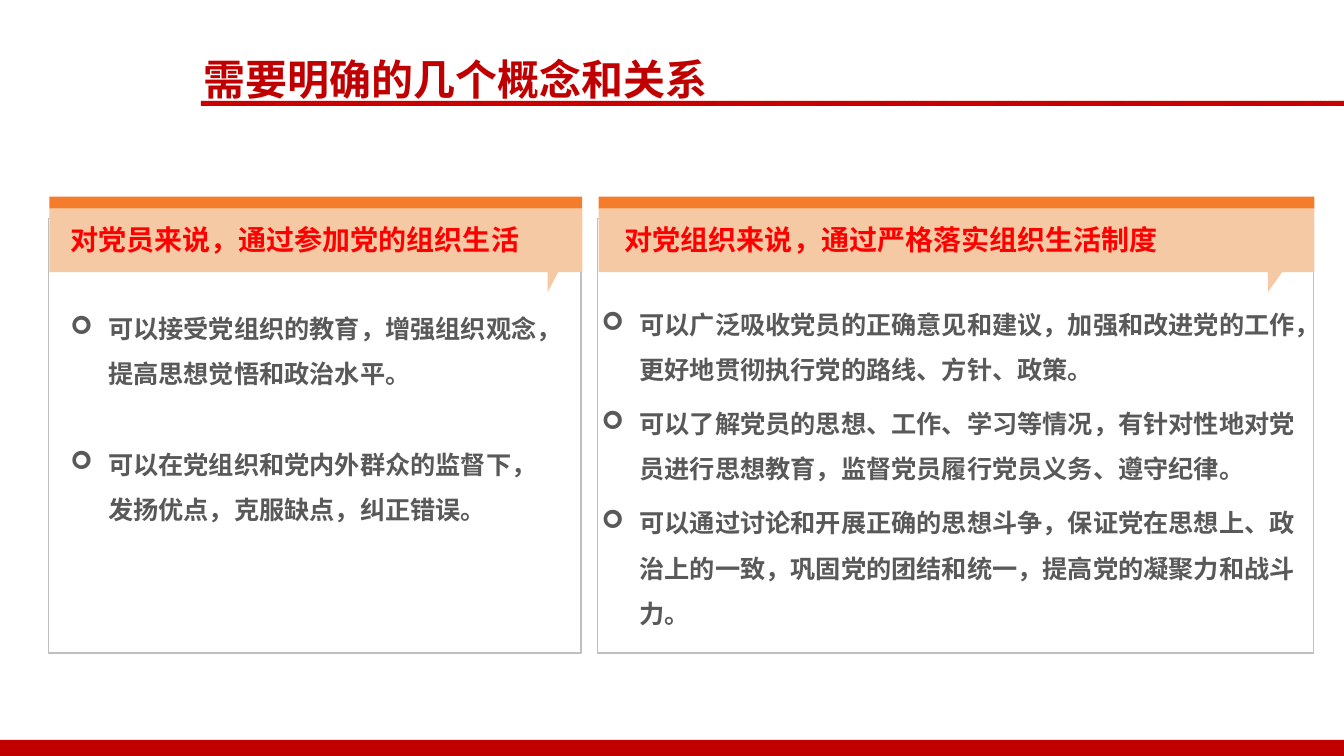
from dataclasses import dataclass

from lxml.etree import SubElement
from pptx import Presentation
from pptx.dml.color import RGBColor
from pptx.enum.dml import MSO_PATTERN
from pptx.enum.shapes import MSO_SHAPE
from pptx.enum.text import MSO_ANCHOR, MSO_AUTO_SIZE, PP_ALIGN
from pptx.oxml.ns import qn
from pptx.shapes.autoshape import Shape
from pptx.shapes.shapetree import GroupShapes, SlideShapes
from pptx.text.text import TextFrame, _Paragraph as Paragraph
from pptx.util import Pt

FONT = "Noto Sans CJK SC"
COLORS = {
    "dark_red": "C00000",
    "red": "FF0000",
    "orange": "F57C2B",
    "peach": "F5C9A4",
    "white": "FFFFFF",
    "border": "BFBFBF",
    "text": "595959",
}
INDENT = 27
BAR_TOP, BAR_HEIGHT = 140.4, 8.64
HEADER_TOP, HEADER_BOTTOM, TAIL_BOTTOM = 149.04, 194.4, 208.8
BODY_TOP, BODY_HEIGHT = 156.24, 310.3


@dataclass(frozen=True)
class Box:
    left: float
    top: float
    width: float
    height: float


@dataclass(frozen=True)
class Card:
    left: float
    width: float
    heading: str
    heading_box: Box
    points: tuple[str, ...]
    points_box: Box
    gap: float


CARDS = (
    Card(
        35.28, 380.6,
        "对党员来说，通过参加党的组织生活",
        Box(43.2, 155.5, 345.6, 31.7),
        (
            "可以接受党组织的教育，增强组织观念，提高思想觉悟和政治水平。",
            "可以在党组织和党内外群众的监督下，发扬优点，克服缺点，纠正错误。",
        ),
        Box(43.2, 209.5, 365, 193),
        32,
    ),
    Card(
        427.68, 511.2,
        "对党组织来说，通过严格落实组织生活制度",
        Box(439.2, 155.5, 398.2, 31.7),
        (
            "可以广泛吸收党员的正确意见和建议，加强和改进党的工作，更好地贯彻执行党的路线、方针、政策。",
            "可以了解党员的思想、工作、学习等情况，有针对性地对党员进行思想教育，监督党员履行党员义务、遵守纪律。",
            "可以通过讨论和开展正确的思想斗争，保证党在思想上、政治上的一致，巩固党的团结和统一，提高党的凝聚力和战斗力。",
        ),
        Box(422.64, 206.6, 511.9, 248.4),
        6,
    ),
)


def color(name: str) -> RGBColor:
    return RGBColor.from_string(COLORS[name])


def paint(shape: Shape, fill: str) -> None:
    shape.shadow.inherit = False
    shape.fill.solid()
    shape.fill.fore_color.rgb = color(fill)
    shape.line.fill.background()


def add_rectangle(shapes: SlideShapes | GroupShapes, box: Box, fill: str) -> Shape:
    shape = shapes.add_shape(
        MSO_SHAPE.RECTANGLE, Pt(box.left), Pt(box.top), Pt(box.width), Pt(box.height)
    )
    paint(shape, fill)
    return shape


def add_run(paragraph: Paragraph, text: str, size: float, color_name: str) -> None:
    run = paragraph.add_run()
    run.text = text
    run.font.size = Pt(size)
    run.font.bold = True
    run.font.color.rgb = color(color_name)
    run.font.name = FONT
    SubElement(run.font._element, qn("a:ea"), typeface=FONT)


def add_text_frame(shapes: GroupShapes, box: Box) -> TextFrame:
    shape = shapes.add_textbox(Pt(box.left), Pt(box.top), Pt(box.width), Pt(box.height))
    shape.text_frame.word_wrap = True
    return shape.text_frame


def add_bullet(paragraph: Paragraph) -> None:
    properties = paragraph._p.get_or_add_pPr()
    properties.set("marL", str(Pt(INDENT)))
    properties.set("indent", str(-Pt(INDENT)))
    SubElement(properties, qn("a:buFont"), typeface="Wingdings")
    SubElement(properties, qn("a:buChar"), char="➢")


def add_header(shapes: GroupShapes, card: Card) -> None:
    right = card.left + card.width
    tail_right = right - card.width * 0.045
    tail_left = right - card.width * 0.065
    builder = shapes.build_freeform(Pt(card.left), Pt(HEADER_TOP))
    corners = (
        (right, HEADER_TOP),
        (right, HEADER_BOTTOM),
        (tail_right, HEADER_BOTTOM),
        (tail_left, TAIL_BOTTOM),
        (tail_left, HEADER_BOTTOM),
        (card.left, HEADER_BOTTOM),
    )
    builder.add_line_segments([(Pt(x), Pt(y)) for x, y in corners])
    paint(builder.convert_to_shape(), "peach")


def add_card(slide_shapes: SlideShapes, card: Card) -> None:
    shapes = slide_shapes.add_group_shape().shapes
    body = add_rectangle(
        shapes, Box(card.left - 0.72, BODY_TOP, card.width, BODY_HEIGHT), "white"
    )
    body.line.color.rgb = color("border")
    body.line.width = Pt(1)
    add_rectangle(shapes, Box(card.left, BAR_TOP, card.width, BAR_HEIGHT), "orange")
    add_header(shapes, card)

    heading = add_text_frame(shapes, card.heading_box)
    add_run(heading.paragraphs[0], card.heading, 20, "red")

    points = add_text_frame(shapes, card.points_box)
    for index, text in enumerate(card.points):
        paragraph = points.add_paragraph() if index else points.paragraphs[0]
        paragraph.line_spacing = 1.5
        if index:
            paragraph.space_before = Pt(card.gap)
        add_bullet(paragraph)
        add_run(paragraph, text, 18, "text")


def format_title(title: Shape) -> None:
    title.left, title.top = Pt(138.24), Pt(16.56)
    title.width, title.height = Pt(378), Pt(61.9)
    frame = title.text_frame
    frame.auto_size = MSO_AUTO_SIZE.NONE
    frame.vertical_anchor = MSO_ANCHOR.TOP
    frame.word_wrap = True
    paragraph = frame.paragraphs[0]
    paragraph.alignment = PP_ALIGN.LEFT
    paragraph.line_spacing = 1.5
    add_run(paragraph, "需要明确的几个概念和关系", 30, "dark_red")


def main() -> None:
    presentation = Presentation()
    presentation.slide_width, presentation.slide_height = Pt(960), Pt(540)
    slide = presentation.slides.add_slide(presentation.slide_layouts[5])
    format_title(slide.shapes.title)

    title_rule = add_rectangle(slide.shapes, Box(143.5, 72, 816.5, 3.6), "dark_red")
    title_rule.fill.patterned()
    title_rule.fill.pattern = MSO_PATTERN.DARK_UPWARD_DIAGONAL
    title_rule.fill.fore_color.rgb = color("red")
    title_rule.fill.back_color.rgb = color("dark_red")
    add_rectangle(slide.shapes, Box(0, 528.5, 960, 11.5), "dark_red")

    for card in CARDS:
        add_card(slide.shapes, card)
    presentation.save("out.pptx")


if __name__ == "__main__":
    main()
